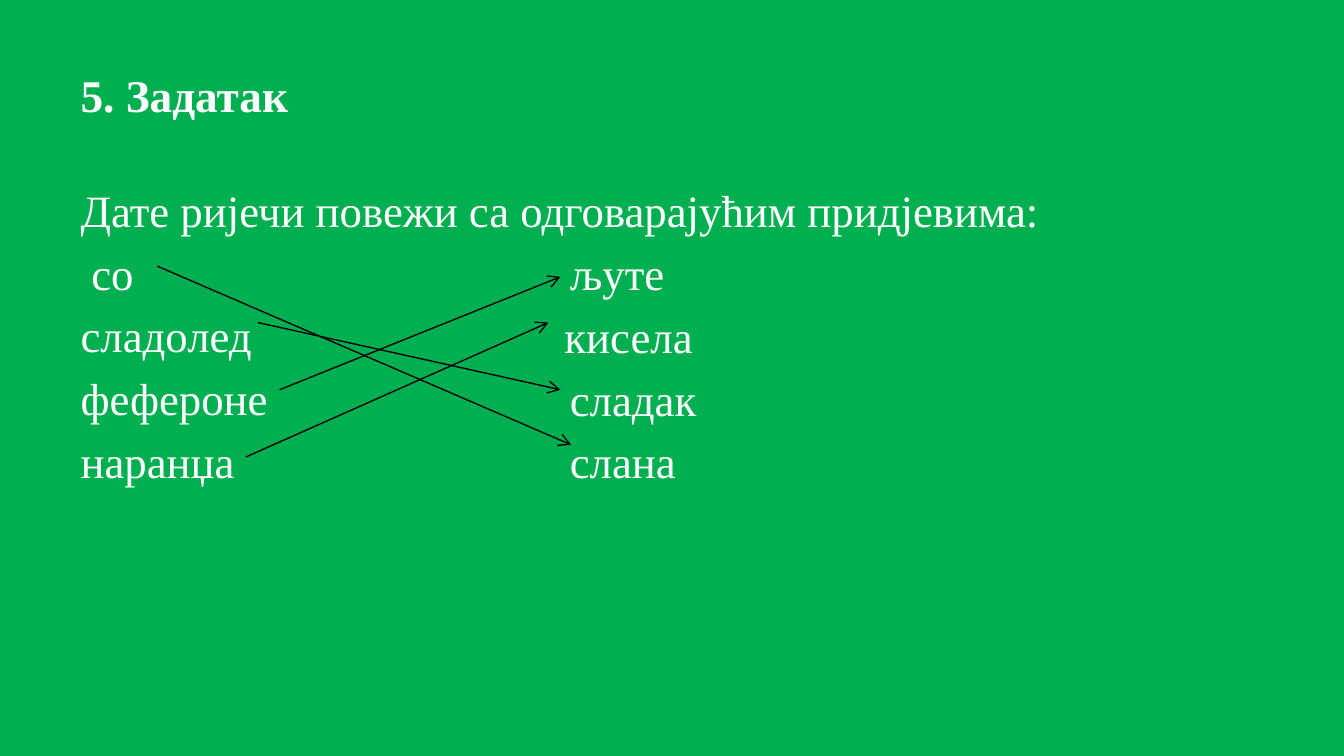
from lxml.etree import SubElement
from pptx import Presentation
from pptx.dml.color import RGBColor
from pptx.enum.shapes import MSO_CONNECTOR
from pptx.enum.text import MSO_ANCHOR, MSO_AUTO_SIZE, PP_ALIGN
from pptx.oxml.ns import qn
from pptx.util import Inches, Pt

COLORS = {"background": "00B050", "text": "FFFFFF", "arrow": "000000"}
FONT = "Times New Roman"
# text, first-line indent
TASK_AND_NOUNS = [
    ("Дате ријечи повежи са одговарајућим придјевима:", 0),
    ("со", 0.08),
    ("сладолед", 0),
    ("фефероне", 0),
    ("наранџа", 0),
]
ADJECTIVES = [("љуте", 0.04), ("кисела", 0), ("сладак", 0.04), ("слана", 0.04)]
# start x, start y, end x, end y, relative to the body box
ARROWS = [
    (0.67, 0.67, 3.75, 2),
    (1.42, 1.09, 3.67, 1.59),
    (1.33, 2.09, 3.58, 1.09),
    (1.58, 1.59, 3.67, 0.75),
]


def color(name):
    return RGBColor.from_string(COLORS[name])


def place(shape, left, top, width, height, anchor):
    for name, value in zip(("left", "top", "width", "height"), (left, top, width, height)):
        setattr(shape, name, Inches(value))
    frame = shape.text_frame
    settings = {"word_wrap": True, "auto_size": MSO_AUTO_SIZE.NONE, "vertical_anchor": anchor}
    for name, value in settings.items():
        setattr(frame, name, value)
    return frame


def format_font(paragraph, size, bold=False):
    for name, value in {"name": FONT, "size": Pt(size), "bold": bold}.items():
        setattr(paragraph.font, name, value)
    paragraph.font.color.rgb = color("text")


def add_title(slide, left, top, width, height):
    frame = place(slide.shapes.title, left, top, width, height, MSO_ANCHOR.MIDDLE)
    paragraph = frame.paragraphs[0]
    paragraph.text = "5. Задатак"
    paragraph.alignment = PP_ALIGN.LEFT
    format_font(paragraph, 24.3, bold=True)


def add_word_list(placeholder, words, left, top, width, height):
    """Fill a placeholder with one unbulleted paragraph for each word."""
    frame = place(placeholder, left, top, width, height, MSO_ANCHOR.TOP)
    for index, (text, indent) in enumerate(words):
        paragraph = frame.add_paragraph() if index else frame.paragraphs[0]
        paragraph.text = text
        properties = paragraph._p.get_or_add_pPr()
        properties.set("marL", "0")
        properties.set("indent", str(Inches(indent)))
        SubElement(properties, qn("a:buNone"))
        paragraph.space_before = Pt(4.8 if index else 0)
        format_font(paragraph, 24)


def add_arrows(slide, left, top):
    for start_x, start_y, end_x, end_y in ARROWS:
        arrow = slide.shapes.add_connector(
            MSO_CONNECTOR.STRAIGHT,
            Inches(left + start_x), Inches(top + start_y),
            Inches(left + end_x), Inches(top + end_y),
        )
        arrow.line.color.rgb = color("arrow")
        arrow.line.width = Pt(0.75)
        SubElement(arrow.line._get_or_add_ln(), qn("a:tailEnd"), type="arrow")
        SubElement(arrow._element.spPr, qn("a:effectLst"))


def main():
    presentation = Presentation()
    presentation.slide_width = Inches(10)
    presentation.slide_height = Inches(10 * 9 / 16)
    two_content = presentation.slide_layouts[3]
    slide = presentation.slides.add_slide(two_content)
    background = slide.background.fill
    background.solid()
    background.fore_color.rgb = color("background")
    add_title(slide, 0.5, 0.23, 9, 0.94)
    add_word_list(slide.placeholders[1], TASK_AND_NOUNS, 0.5, 1.31, 9, 3.71)
    add_word_list(slide.placeholders[2], ADJECTIVES, 4.1, 1.78, 2, 2)
    add_arrows(slide, 0.5, 1.31)
    presentation.save("out.pptx")


if __name__ == "__main__":
    main()
